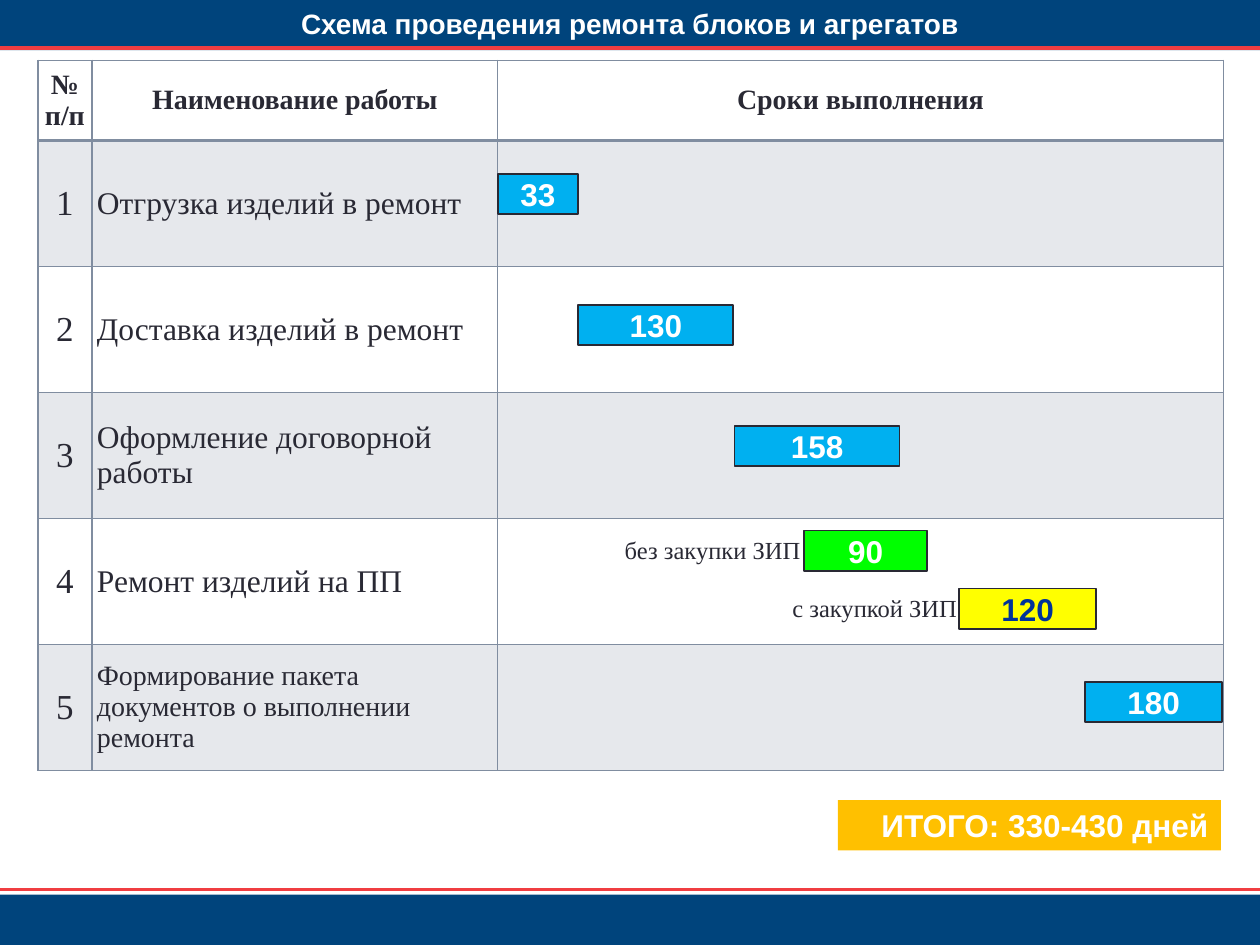
from dataclasses import dataclass

from lxml import etree
from pptx import Presentation
from pptx.dml.color import RGBColor
from pptx.enum.shapes import MSO_CONNECTOR, MSO_SHAPE
from pptx.enum.text import MSO_ANCHOR, PP_ALIGN
from pptx.oxml.ns import qn
from pptx.util import Inches, Pt

RECT, STRAIGHT = MSO_SHAPE.RECTANGLE, MSO_CONNECTOR.STRAIGHT
LEFT, CENTER, RIGHT = PP_ALIGN.LEFT, PP_ALIGN.CENTER, PP_ALIGN.RIGHT
TOP, MIDDLE = MSO_ANCHOR.TOP, MSO_ANCHOR.MIDDLE


@dataclass(frozen=True)
class Theme:
    navy: str = "00447C"
    red: str = "F03D41"
    white: str = "FFFFFF"
    ink: str = "292934"
    grid: str = "808DA0"
    band: str = "E6E8EC"
    blue: str = "00B0F0"
    green: str = "00FF00"
    yellow: str = "FFFF00"
    amber: str = "FFC000"
    dark_blue: str = "003399"
    sans: str = "Arial"
    serif: str = "Times New Roman"
    label: int = 14
    head: int = 16
    body: int = 18
    number: int = 20


T = Theme()


def write(tf, text, *, size, color=T.ink, font=T.serif, bold=False, align=LEFT):
    """Fill a text frame, one paragraph per line of text."""
    for i, line in enumerate(text.split("\n")):
        p = tf.paragraphs[0] if i == 0 else tf.add_paragraph()
        p.alignment = align
        r = p.add_run()
        r.text = line
        r.font.name, r.font.size, r.font.bold = font, Pt(size), bold
        r.font.color.rgb = RGBColor.from_string(color)


def add_rect(x, y, w, h, fill, line=None):
    sp = s.shapes.add_shape(RECT, Inches(x), Inches(y), Inches(w), Inches(h))
    sp.shadow.inherit = False
    sp.fill.solid()
    sp.fill.fore_color.rgb = RGBColor.from_string(fill)
    if line:
        sp.line.color.rgb = RGBColor.from_string(line)
        sp.line.width = Pt(1)
    else:
        sp.line.fill.background()
    return sp


prs = Presentation()
prs.slide_width, prs.slide_height = Inches(10), Inches(7.5)
s = prs.slides.add_slide(prs.slide_layouts[6])

# Top and bottom bands with red rules
for y, h, fill in [(0, 0.4, T.navy), (0.4, 0.05, T.white), (7.1, 0.4, T.navy)]:
    add_rect(0, y, 10, h, fill)
for y in (0.38, 7.06):
    rule = s.shapes.add_connector(STRAIGHT, 0, Inches(y), Inches(10), Inches(y))
    rule.line.color.rgb = RGBColor.from_string(T.red)
    rule.line.width = Pt(2)
    etree.SubElement(rule._element.spPr, qn("a:effectLst"))

title = s.shapes.add_textbox(0, 0, Inches(10), Inches(0.37))
title.text_frame.word_wrap = True
write(title.text_frame, "Схема проведения ремонта блоков и агрегатов",
      size=T.head, color=T.white, font=T.sans, bold=True, align=CENTER)

# Table of works
rows = [
    ("№\nп/п", "Наименование работы", "Сроки выполнения"),
    ("1", "Отгрузка изделий в ремонт", ""),
    ("2", "Доставка изделий в ремонт", ""),
    ("3", "Оформление договорной работы", ""),
    ("4", "Ремонт изделий на ПП", ""),
    ("5", "Формирование пакета документов о выполнении ремонта", ""),
]
col_widths = [0.43, 3.22, 5.76]
row_heights = [0.63] + [1] * 5
frame = s.shapes.add_table(len(rows), len(col_widths), Inches(0.3), Inches(0.48),
                           Inches(sum(col_widths)), Inches(sum(row_heights)))
table = frame.table
for col, w in zip(table.columns, col_widths):
    col.width = Inches(w)
for row, h in zip(table.rows, row_heights):
    row.height = Inches(h)

for i, texts in enumerate(rows):
    for j, text in enumerate(texts):
        cell = table.cell(i, j)
        cell.vertical_anchor = MIDDLE
        if j == 0 or (i > 0 and j == 1):
            cell.margin_left, cell.margin_right = Inches(0.04 * j), 0

        tcPr = cell._tc.get_or_add_tcPr()
        for side in "LRTB":
            thick = (i == 0 and side == "B") or (i == 1 and side == "T")
            ln = etree.SubElement(tcPr, qn(f"a:ln{side}"), w=str(Pt(2 if thick else 1)))
            solid = etree.SubElement(ln, qn("a:solidFill"))
            etree.SubElement(solid, qn("a:srgbClr"), val=T.grid)
        cell.fill.solid()
        cell.fill.fore_color.rgb = RGBColor.from_string(T.band if i % 2 else T.white)

        if i == 0:
            write(cell.text_frame, text, size=T.head, bold=True, align=CENTER)
        elif j == 0:
            write(cell.text_frame, text, size=T.number, align=CENTER)
        elif text:
            # The longest name is set smaller to stay within its row
            write(cell.text_frame, text, size=T.head if i == 5 else T.body)

# Duration bars: left, top, width, days, fill, text colour
bars = [
    (3.95, 1.38, 0.64, "33", T.blue, T.white),
    (4.59, 2.42, 1.23, "130", T.blue, T.white),
    (5.83, 3.38, 1.31, "158", T.blue, T.white),
    (6.38, 4.21, 0.98, "90", T.green, T.white),
    (8.61, 5.41, 1.09, "180", T.blue, T.white),
    (7.61, 4.67, 1.09, "120", T.yellow, T.dark_blue),
]
for x, y, w, days, fill, color in bars:
    sp = add_rect(x, y, w, 0.32, fill, T.ink)
    tf = sp.text_frame
    tf.margin_left = tf.margin_right = tf.margin_top = tf.margin_bottom = 0
    tf.vertical_anchor = MIDDLE
    write(tf, days, size=T.body, color=color, font=T.sans, bold=True, align=CENTER)

for x, y, w, text in [(4.86, 4.2, 1.61, "без закупки ЗИП"),
                      (6.19, 4.66, 1.52, "с закупкой ЗИП")]:
    label = s.shapes.add_textbox(Inches(x), Inches(y), Inches(w), Inches(0.34))
    label.text_frame.word_wrap = False
    write(label.text_frame, text, size=T.label)

total = add_rect(6.65, 6.35, 3.04, 0.4, T.amber)
total.text_frame.vertical_anchor = TOP
write(total.text_frame, "ИТОГО: 330-430 дней", size=T.body, color=T.white,
      font=T.sans, bold=True, align=RIGHT)

prs.save("out.pptx")
